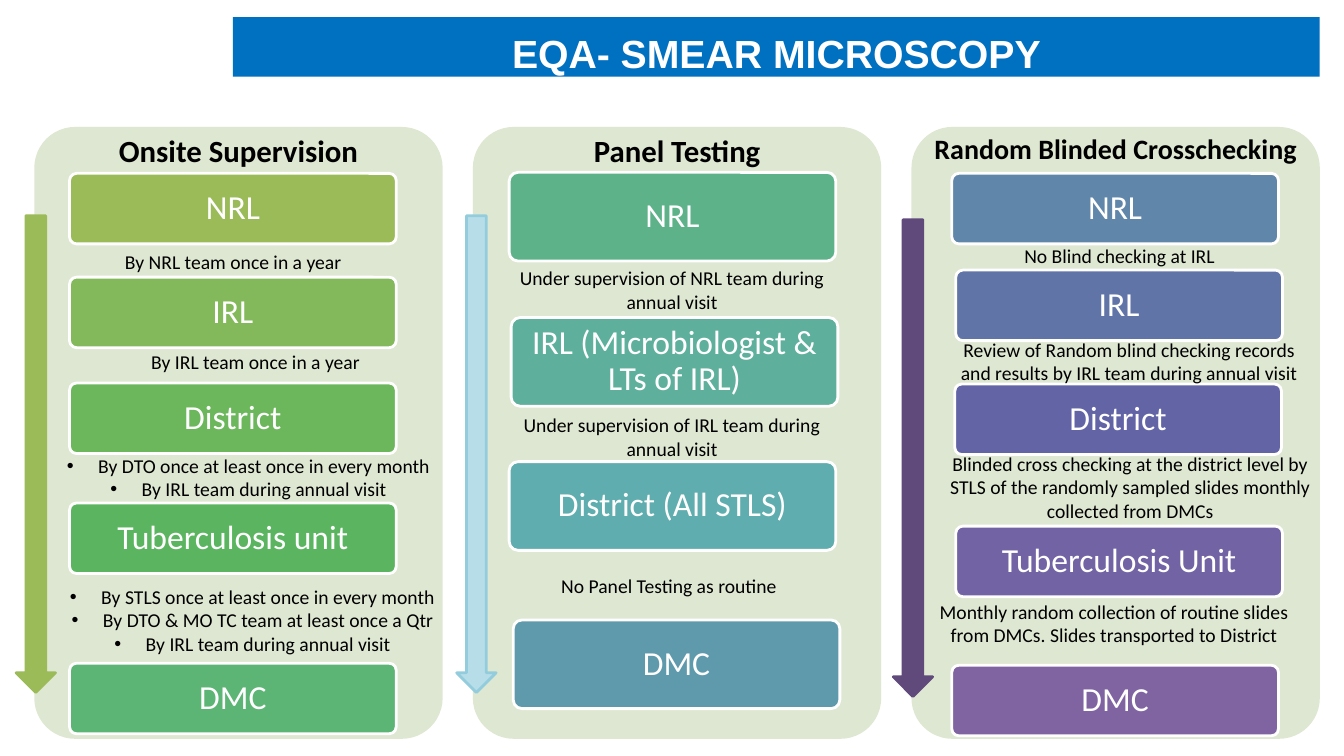
from dataclasses import dataclass

from lxml.etree import SubElement
from pptx import Presentation
from pptx.dml.color import RGBColor
from pptx.enum.shapes import MSO_SHAPE
from pptx.enum.text import MSO_ANCHOR, PP_ALIGN
from pptx.oxml.ns import qn
from pptx.util import Inches, Pt

# Content: stages are (label, fill, x in panel, top);
# notes are (paragraphs, x in panel, top, width, text rows)
TITLE = "EQA- SMEAR MICROSCOPY"
COLUMNS = [
    dict(
        heading="Onsite Supervision", heading_size=22, heading_inset=0.09, box_h=0.7,
        arrow=(-0.18, 2.14, "9BBB59", "9BBB59"),
        stages=[
            ("NRL", "9BBB59", 0.35, 1.72),
            ("IRL", "83B95A", 0.35, 2.75),
            ("District", "6CB75B", 0.35, 3.8),
            ("Tuberculosis unit", "5BB560", 0.35, 4.99),
            ("DMC", "5CB475", 0.35, 6.58),
        ],
        notes=[
            (["By NRL team once in a year"], 0.8, 2.43, 3.29, 1),
            (["By IRL team once in a year"], 0.55, 3.42, 3.29, 1),
            (["By DTO once at least once in every month",
              "By IRL team during annual visit"], 0.16, 4.45, 3.93, 2),
            (["By STLS once at least once in every month",
              "By DTO & MO TC team at least once a Qtr",
              "By IRL team during annual visit"], 0, 5.75, 4.33, 5),
        ],
    ),
    dict(
        heading="Panel Testing", heading_size=22, heading_inset=0.09, box_h=0.88,
        arrow=(-0.16, 2.14, "B7DEE8", "93CDDD"),
        stages=[
            ("NRL", "5DB28A", 0.36, 1.71),
            ("IRL (Microbiologist & LTs of IRL)", "5EB09D", 0.38, 3.15),
            ("District (All STLS)", "5FADAE", 0.36, 4.58),
            ("DMC", "5F99AC", 0.4, 6.15),
        ],
        notes=[
            (["Under supervision of NRL team during annual visit"], 0.33, 2.59, 3.29, 2),
            (["Under supervision of IRL team during annual visit"], 0.18, 4.05, 3.59, 2),
            (["No Panel Testing as routine"], 0.15, 5.64, 3.59, 1),
        ],
    ),
    dict(
        heading="Random Blinded Crosschecking", heading_size=20, heading_inset=0.08, box_h=0.7,
        arrow=(-0.18, 2.18, "604A7B", "604A7B"),
        stages=[
            ("NRL", "6086AA", 0.4, 1.72),
            ("IRL", "6174A8", 0.44, 2.68),
            ("District", "6264A6", 0.43, 3.81),
            ("Tuberculosis Unit", "7163A4", 0.44, 5.22),
            ("DMC", "8064A2", 0.4, 6.6),
        ],
        notes=[
            (["No Blind checking at IRL"], 0.27, 2.37, 3.59, 1),
            (["Review of Random blind checking records and results "
              "by IRL team during annual visit"], 0.27, 3.3, 3.78, 2),
            (["Blinded cross checking at the district level by STLS of the "
              "randomly sampled slides monthly collected from DMCs"], 0.28, 4.43, 3.78, 3),
            (["Monthly random collection of routine slides from DMCs. "
              "Slides transported to District"], 0.12, 5.9, 3.78, 2),
        ],
    ),
]


@dataclass(frozen=True)
class Theme:
    banner: str = "0070C0"
    panel: str = "DEE7D1"
    light: str = "FFFFFF"
    dark: str = "000000"
    title_font: str = "Arial"
    body_font: str = "Calibri"
    title_size: int = 28
    stage_size: int = 24
    note_size: int = 14


T = Theme()

# Grid, in inches
SLIDE_W, SLIDE_H = 13.33, 7.5
PANEL_X, PANEL_Y, PANEL_W, PANEL_H, PITCH = 0.34, 1.26, 4.05, 6.07, 4.35
HEADING_H, STAGE_W = 1.82, 3.24
ARROW_W, ARROW_H = 0.39, 4.73
NOTE_ROW, NOTE_PAD, BULLET_INDENT = 0.236, 0.1, 0.31

prs = Presentation()
prs.slide_width, prs.slide_height = Inches(SLIDE_W), Inches(SLIDE_H)
s = prs.slides.add_slide(prs.slide_layouts[6])


def add_box(kind, x, y, w, h, fill, line=None, corner=None):
    sp = s.shapes.add_shape(kind, Inches(x), Inches(y), Inches(w), Inches(h))
    sp.shadow.inherit = False
    sp.fill.solid()
    sp.fill.fore_color.rgb = RGBColor.from_string(fill)
    if line:
        sp.line.color.rgb = RGBColor.from_string(line)
        sp.line.width = Pt(2)
    else:
        sp.line.fill.background()
    if corner is not None:
        sp.adjustments[0] = corner
    return sp


def add_textbox(x, y, w, h):
    return s.shapes.add_textbox(Inches(x), Inches(y), Inches(w), Inches(h))


def add_bullet(p):
    pPr = p._p.get_or_add_pPr()
    pPr.set("marL", str(Inches(BULLET_INDENT)))
    pPr.set("indent", str(-Inches(BULLET_INDENT)))
    SubElement(pPr, qn("a:buFont")).set("typeface", "Arial")
    SubElement(pPr, qn("a:buChar")).set("char", "•")


def write(sp, lines, size, color=T.dark, font=T.body_font, bold=False, spacing=None,
          align=PP_ALIGN.CENTER, anchor=MSO_ANCHOR.TOP, inset=(0.1, 0.05, 0.1, 0.05)):
    tf = sp.text_frame
    tf.word_wrap = True
    tf.vertical_anchor = anchor
    (tf.margin_left, tf.margin_top,
     tf.margin_right, tf.margin_bottom) = [Inches(v) for v in inset]
    for i, line in enumerate(lines):
        p = tf.add_paragraph() if i else tf.paragraphs[0]
        p.alignment = align
        if spacing:
            p.line_spacing = spacing
        if len(lines) > 1:
            add_bullet(p)
        r = p.add_run()
        r.text = line
        r.font.name, r.font.size, r.font.bold = font, Pt(size), bold
        r.font.color.rgb = RGBColor.from_string(color)


# Title banner
write(add_box(MSO_SHAPE.RECTANGLE, 2.31, 0.17, 10.78, 0.59, T.banner), [TITLE],
      T.title_size, color=T.light, font=T.title_font, bold=True,
      anchor=MSO_ANCHOR.MIDDLE, inset=(0, 0.12, 0, 0))

for i, col in enumerate(COLUMNS):
    left = PANEL_X + i * PITCH

    # Panel and heading
    add_box(MSO_SHAPE.ROUNDED_RECTANGLE, left, PANEL_Y, PANEL_W, PANEL_H, T.panel, corner=0.1)
    write(add_textbox(left, PANEL_Y, PANEL_W, HEADING_H), [col["heading"]],
          col["heading_size"], bold=True, spacing=0.9, inset=(col["heading_inset"],) * 4)

    # Stages
    for label, fill, dx, top in col["stages"]:
        sp = add_box(MSO_SHAPE.ROUNDED_RECTANGLE, left + dx, top, STAGE_W, col["box_h"],
                     fill, line=T.light, corner=0.1)
        write(sp, [label], T.stage_size, color=T.light, spacing=0.9,
              anchor=MSO_ANCHOR.MIDDLE, inset=(0.07, 0.05, 0.07, 0.05))

    # Notes between stages
    for j, (lines, dx, top, width, rows) in enumerate(col["notes"]):
        first = i == 0 and j == 0
        write(add_textbox(left + dx, top, width, NOTE_PAD + rows * NOTE_ROW), lines,
              T.note_size, align=PP_ALIGN.LEFT if first else PP_ALIGN.CENTER)

    # Downward arrow
    dx, top, fill, line = col["arrow"]
    add_box(MSO_SHAPE.DOWN_ARROW, left + dx, top, ARROW_W, ARROW_H, fill, line=line)

prs.save("out.pptx")
